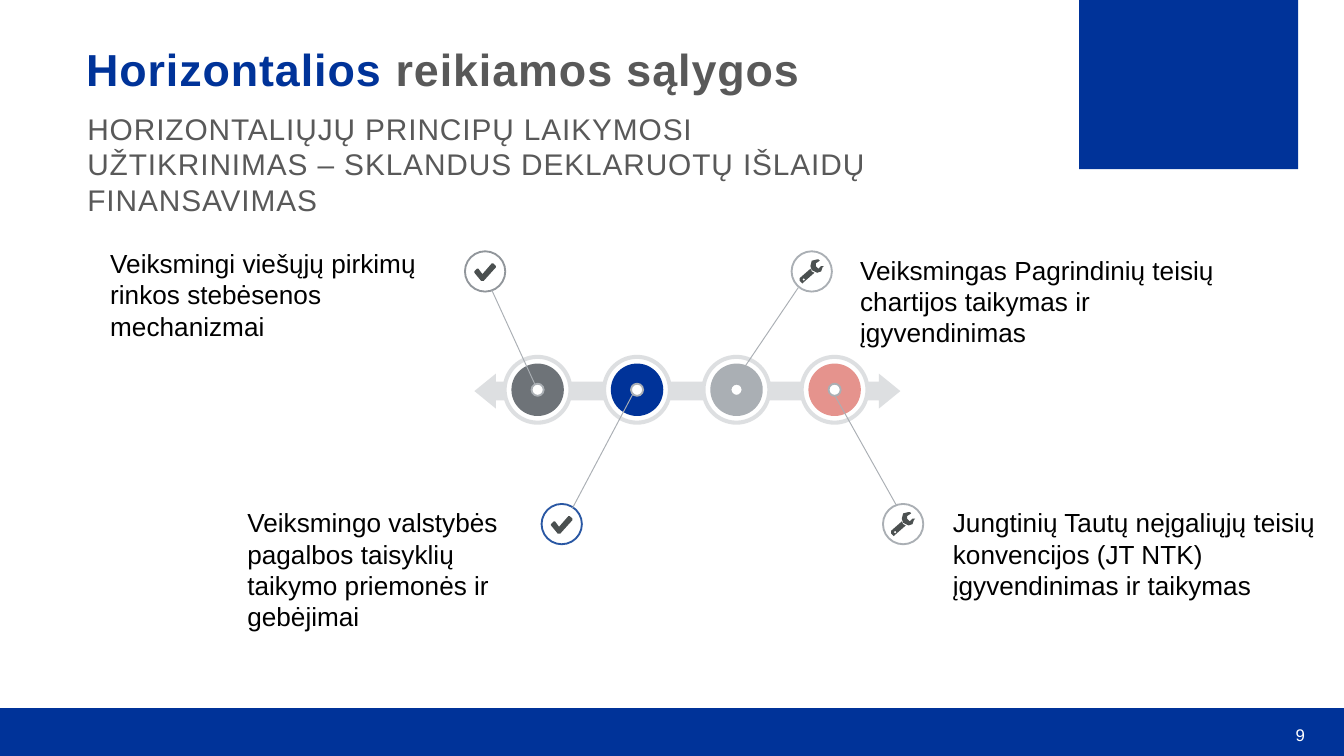
from dataclasses import dataclass
from math import asin, cos, degrees, radians, sin

from lxml import etree
from pptx import Presentation
from pptx import util as u
from pptx.dml.color import RGBColor
from pptx.enum import shapes, text
from pptx.oxml import ns


@dataclass(frozen=True)
class Theme:
    font: str = "Arial"
    blue: str = "003399"
    ring_blue: str = "2957A3"
    grey: str = "595959"
    dark: str = "6E7378"
    ring_dark: str = "91969B"
    light: str = "AAAFB4"
    coral: str = "E5938D"
    icon: str = "4B5050"
    black: str = "000000"
    white: str = "FFFFFF"
    title_size: int = 24
    subtitle_size: int = 16
    label_size: int = 14
    number_size: int = 9


@dataclass(frozen=True)
class Milestone:
    label: str
    label_box: tuple
    fill: str
    ring: str
    badge: tuple
    icon: str
    line: tuple


THEME = Theme()

MILESTONES = [
    Milestone("Veiksmingi viešųjų pirkimų rinkos stebėsenos mechanizmai",
              (0.82, 1.84, 2.59, 0.71), THEME.dark, THEME.ring_dark,
              (3.61, 2.02), "check", (3.66, 2.16, 3.98, 2.86)),
    Milestone("Veiksmingo valstybės pagalbos taisyklių taikymo priemonės ir gebėjimai",
              (1.84, 3.77, 1.95, 0.94), THEME.blue, THEME.ring_blue,
              (4.18, 3.9), "check", (4.26, 3.78, 4.71, 2.93)),
    Milestone("Veiksmingas Pagrindinių teisių chartijos taikymas ir įgyvendinimas",
              (6.4, 1.89, 2.82, 0.71), THEME.light, THEME.light,
              (6.04, 2.02), "wrench", (5.94, 2.14, 5.46, 2.85)),
    Milestone("Jungtinių Tautų neįgaliųjų teisių konvencijos (JT NTK) įgyvendinimas ir taikymas",
              (7.09, 3.77, 2.76, 0.71), THEME.coral, THEME.light,
              (6.72, 3.9), "wrench", (6.67, 3.76, 6.21, 2.94)),
]

# Icon outlines in hundredths of an inch from the icon's top left corner.
ICONS = {
    "check": [[(16, 3), (7, 13), (5, 13), (0, 7), (0, 6), (2, 4), (3, 4),
               (6, 8), (13, 0), (14, 0), (16, 2)]],
    "wrench": [
        [(11, 10), (3, 17), (2, 18), (1, 17), (0, 16), (0, 14), (8, 7), (9, 9)],
        [(4, 15), (3, 14), (2, 15), (3, 16)],
        [(18, 5), (17, 6), (16, 9), (13, 10), (9, 8), (8, 5), (9, 1), (13, 0),
         (14, 0), (15, 1), (12, 3), (12, 5), (14, 7), (15, 6), (16, 5)],
    ],
}
ICON_OFFSETS = {"check": (0.08, 0.06), "wrench": (0.09, 0.09)}

SLIDE_WIDTH = 10
SLIDE_HEIGHT = SLIDE_WIDTH * 9 / 16
FOOTER_TOP = 5.27
AXIS = 2.9
CENTRES = [4, 4.74, 5.48, 6.21]


def color(value):
    return RGBColor.from_string(value)


def write(frame, runs, size, align=text.PP_ALIGN.LEFT, spacing=0, bold=False):
    """Fill a text frame with one paragraph of (text, colour) runs."""
    frame.margin_left = frame.margin_right = frame.margin_top = frame.margin_bottom = 0
    frame.word_wrap = True
    frame.auto_size = text.MSO_AUTO_SIZE.NONE
    frame.vertical_anchor = text.MSO_ANCHOR.TOP
    paragraph = frame.paragraphs[0]
    properties = paragraph._p.get_or_add_pPr()
    properties.set("marL", "0")
    properties.set("indent", "0")
    etree.SubElement(properties, ns.qn("a:buNone"))
    paragraph.alignment = align
    paragraph.line_spacing = 1.0
    paragraph.space_before = u.Pt(0)
    for words, run_color in runs:
        run = paragraph.add_run()
        run.text = words
        run.font.name = THEME.font
        run.font.size = u.Pt(size)
        run.font.bold = bold
        run.font.color.rgb = color(run_color)
        run._r.get_or_add_rPr().set("spc", str(round(spacing * 100)))


def arc(x, y, radius, start, end, steps=24):
    """Points of a circular arc, with angles in degrees clockwise from the right."""
    angles = [radians(start + (end - start) * step / steps) for step in range(steps + 1)]
    return [(x + radius * cos(angle), y + radius * sin(angle)) for angle in angles]


def track_contours():
    """A double-headed arrow with a ring around each milestone."""
    left, right, middle = 3.53, 6.7, 2.91
    top, bottom, head_length, head_half = 2.84, 2.98, 0.16, 0.13
    radius, hole = 0.26, 0.23
    upper = degrees(asin((AXIS - top) / radius))
    lower = degrees(asin((bottom - AXIS) / radius))
    neck_left, neck_right = left + head_length, right - head_length
    outline = [(left, middle), (neck_left, middle - head_half), (neck_left, top)]
    for x in CENTRES:
        outline += arc(x, AXIS, radius, 180 + upper, 360 - upper)
    outline += [(neck_right, top), (neck_right, middle - head_half), (right, middle),
                (neck_right, middle + head_half), (neck_right, bottom)]
    for x in reversed(CENTRES):
        outline += arc(x, AXIS, radius, lower, 180 - lower)
    outline += [(neck_left, bottom), (neck_left, middle + head_half)]
    return [outline] + [arc(x, AXIS, hole, 0, 360, 48) for x in CENTRES]


class SlideBuilder:
    def __init__(self, slide, theme):
        self.slide = slide
        self.theme = theme

    def style(self, shape, fill=None, line=None):
        shape.shadow.inherit = False
        if fill:
            shape.fill.solid()
            shape.fill.fore_color.rgb = color(fill)
        else:
            shape.fill.background()
        if line:
            shape.line.color.rgb = color(line)
            shape.line.width = u.Pt(1)
        else:
            shape.line.fill.background()

    def rectangle(self, *box, fill):
        shape = self.slide.shapes.add_shape(
            shapes.MSO_SHAPE.RECTANGLE, *map(u.Inches, box))
        self.style(shape, fill)

    def circle(self, x, y, diameter, fill=None, line=None):
        box = (x - diameter / 2, y - diameter / 2, diameter, diameter)
        shape = self.slide.shapes.add_shape(shapes.MSO_SHAPE.OVAL, *map(u.Inches, box))
        self.style(shape, fill, line)

    def outline(self, contours, fill, opacity=None):
        builder = None
        for contour in contours:
            points = [(u.Inches(x), u.Inches(y)) for x, y in contour]
            if builder is None:
                builder = self.slide.shapes.build_freeform(*points[0])
            else:
                builder.move_to(*points[0])
            builder.add_line_segments(points[1:], close=True)
        shape = builder.convert_to_shape()
        self.style(shape, fill)
        if opacity:
            fill_color = shape._element.spPr.find(".//" + ns.qn("a:srgbClr"))
            etree.SubElement(fill_color, ns.qn("a:alpha"), val=str(opacity * 1000))

    def icon(self, name, x, y):
        dx, dy = ICON_OFFSETS[name]
        contours = [[(x - dx + px / 100, y - dy + py / 100) for px, py in contour]
                    for contour in ICONS[name]]
        self.outline(contours, self.theme.icon)

    def line(self, *ends):
        connector = self.slide.shapes.add_connector(
            shapes.MSO_CONNECTOR.STRAIGHT, *map(u.Inches, ends))
        connector.line.color.rgb = color(self.theme.light)
        connector.line.width = u.Pt(0.5)
        etree.SubElement(connector._element.spPr, ns.qn("a:effectLst"))

    def textbox(self, box, runs, **style):
        shape = self.slide.shapes.add_textbox(*map(u.Inches, box))
        write(shape.text_frame, runs, **style)

    def placeholder(self, index, box, runs, **style):
        shape = self.slide.placeholders[index]
        shape.left, shape.top, shape.width, shape.height = map(u.Inches, box)
        write(shape.text_frame, runs, **style)


def main():
    presentation = Presentation()
    presentation.slide_width = u.Inches(SLIDE_WIDTH)
    presentation.slide_height = u.Inches(SLIDE_HEIGHT)
    slide = presentation.slides.add_slide(presentation.slide_layouts[1])
    builder = SlideBuilder(slide, THEME)

    builder.rectangle(0, FOOTER_TOP, SLIDE_WIDTH, SLIDE_HEIGHT - FOOTER_TOP, fill=THEME.blue)
    builder.rectangle(8.03, 0, 1.63, 1.26, fill=THEME.blue)
    builder.textbox((9.48, 5.39, 0.23, 0.15), [("9", THEME.white)],
                    size=THEME.number_size, align=text.PP_ALIGN.RIGHT, spacing=0.3)
    builder.placeholder(0, (0.64, 0.31, 7.24, 0.42),
                        [("Horizontalios ", THEME.blue), ("reikiamos sąlygos", THEME.grey)],
                        size=THEME.title_size, bold=True, spacing=0.5)
    builder.placeholder(1, (0.65, 0.82, 5.81, 0.44),
                        [("HORIZONTALIŲJŲ PRINCIPŲ LAIKYMOSI UŽTIKRINIMAS – SKLANDUS "
                          "DEKLARUOTŲ IŠLAIDŲ FINANSAVIMAS", THEME.grey)],
                        size=THEME.subtitle_size, spacing=0.5)

    for x, milestone in zip(CENTRES, MILESTONES):
        builder.circle(x, AXIS, 0.39, fill=milestone.fill)
    builder.outline(track_contours(), THEME.light, opacity=40)
    for x, milestone in zip(CENTRES, MILESTONES):
        builder.circle(*milestone.badge, 0.3, line=milestone.ring)
        builder.circle(x, AXIS, 0.09, fill=THEME.white, line=THEME.light)
        builder.line(*milestone.line)
        builder.textbox(milestone.label_box, [(milestone.label, THEME.black)],
                        size=THEME.label_size)
        builder.icon(milestone.icon, *milestone.badge)

    presentation.save("out.pptx")


if __name__ == "__main__":
    main()
